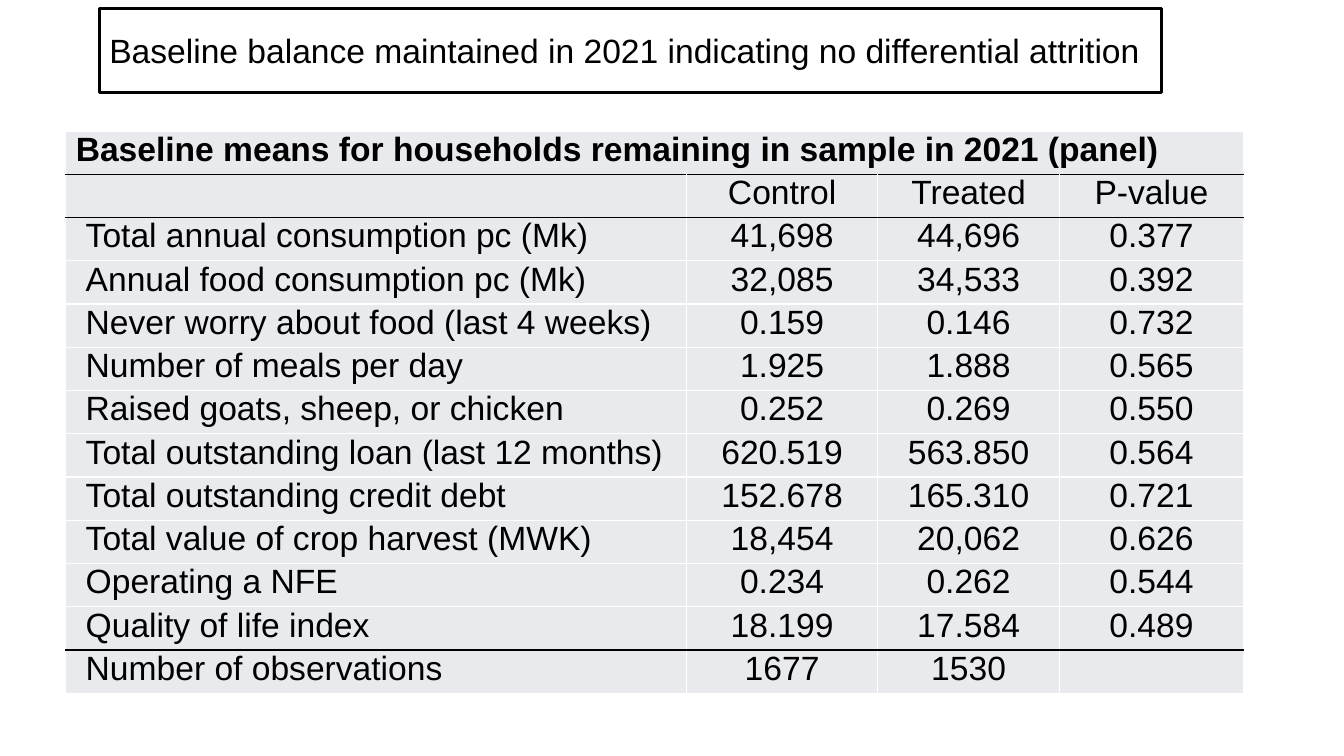
"""Build a slide with a boxed heading and a table of baseline means."""
from dataclasses import dataclass

from lxml import etree
from pptx import Presentation
from pptx.dml.color import RGBColor
from pptx.enum.text import MSO_ANCHOR, MSO_AUTO_SIZE, PP_ALIGN
from pptx.oxml.ns import qn
from pptx.util import Cm, Pt

LEFT, CENTER = PP_ALIGN.LEFT, PP_ALIGN.CENTER
MIDDLE = MSO_ANCHOR.MIDDLE
GROW = MSO_AUTO_SIZE.SHAPE_TO_FIT_TEXT

HEADING = "Baseline balance maintained in 2021 indicating no differential attrition"
ROWS = [
    ("Baseline means for households remaining in sample in 2021 (panel)", "", "", ""),
    ("", "Control", "Treated", "P-value"),
    ("Total annual consumption pc (Mk)", "41,698", "44,696", "0.377"),
    ("Annual food consumption pc (Mk)", "32,085", "34,533", "0.392"),
    ("Never worry about food (last 4 weeks)", "0.159", "0.146", "0.732"),
    ("Number of meals per day", "1.925", "1.888", "0.565"),
    ("Raised goats, sheep, or chicken", "0.252", "0.269", "0.550"),
    ("Total outstanding loan (last 12 months)", "620.519", "563.850", "0.564"),
    ("Total outstanding credit debt", "152.678", "165.310", "0.721"),
    ("Total value of crop harvest (MWK)", "18,454", "20,062", "0.626"),
    ("Operating a NFE", "0.234", "0.262", "0.544"),
    ("Quality of life index", "18.199", "17.584", "0.489"),
    ("Number of observations", "1677", "1530", ""),
]
HEADER_ROWS = 2
RULED_BELOW = {0, 1, len(ROWS) - 2}


@dataclass(frozen=True)
class Theme:
    """Colours and type sizes of the slide."""
    font: str = "Arial"
    size: int = 24
    ink: str = "000000"
    grid: str = "FFFFFF"
    cell: str = "E8EAED"


def write(tf, text, theme, bold=False, align=LEFT, after=0, indent=0):
    """Put one formatted paragraph into a text frame."""
    p = tf.paragraphs[0]
    p.alignment = align
    p.space_after = Pt(after)
    if indent:
        p._p.get_or_add_pPr().set("marL", str(Cm(indent)))
    r = p.add_run()
    r.text = text
    r.font.name = theme.font
    r.font.size = Pt(theme.size)
    r.font.bold = bold
    r.font.color.rgb = RGBColor.from_string(theme.ink)


def border(cell, side, color):
    """Draw one side of a table cell."""
    ln = etree.SubElement(cell._tc.get_or_add_tcPr(), qn(f"a:ln{side}"), w=str(Pt(1)))
    fill = etree.SubElement(ln, qn("a:solidFill"))
    etree.SubElement(fill, qn("a:srgbClr"), val=color)


class Builder:
    """Hold the theme and the current slide."""

    def __init__(self, prs, theme):
        """Add a title-only slide."""
        self.theme = theme
        self.s = prs.slides.add_slide(prs.slide_layouts[5])

    def heading(self, text, left, top, width, height):
        """Place the title in an outlined box."""
        sp = self.s.shapes.title
        sp.left, sp.top, sp.width, sp.height = map(Cm, (left, top, width, height))
        sp.line.color.rgb = RGBColor.from_string(self.theme.ink)
        sp.line.width = Pt(2)
        tf = sp.text_frame
        tf.word_wrap = False
        tf.auto_size = GROW
        tf.vertical_anchor = MIDDLE
        write(tf, text, self.theme)

    def style_cell(self, cell, row):
        """Set the margins, borders and fill of a cell."""
        cell.margin_left = cell.margin_right = Cm(0.25)
        cell.margin_top = cell.margin_bottom = 0
        above, below = (
            self.theme.ink if i in RULED_BELOW else self.theme.grid
            for i in (row - 1, row)
        )
        for side, color in zip("LRTB", (self.theme.grid, self.theme.grid, above, below)):
            border(cell, side, color)
        cell.fill.solid()
        cell.fill.fore_color.rgb = RGBColor.from_string(self.theme.cell)

    def table(self, rows, left, top, widths, row_height):
        """Add the table, its first row merged into a caption."""
        frame = self.s.shapes.add_table(
            len(rows), len(widths), Cm(left), Cm(top),
            Cm(sum(widths)), Cm(row_height * len(rows)))
        tbl = frame.table
        tbl.first_row = tbl.horz_banding = False
        for col, width in zip(tbl.columns, widths):
            col.width = Cm(width)
        for i, row in enumerate(rows):
            tbl.rows[i].height = Cm(row_height)
            header = i < HEADER_ROWS
            for j, text in enumerate(row):
                cell = tbl.cell(i, j)
                self.style_cell(cell, i)
                if text:
                    write(cell.text_frame, text, self.theme, bold=i == 0,
                          align=CENTER if j else LEFT, after=4 if header else 0,
                          indent=0 if header or j else 0.25)
        tbl.cell(0, 0).merge(tbl.cell(0, len(widths) - 1))


def main():
    """Build and save the presentation."""
    prs = Presentation()
    prs.slide_width, prs.slide_height = Cm(33.87), Cm(19.05)
    b = Builder(prs, Theme())
    b.table(ROWS, 1.66, 3.3, (15.65, 4.8, 4.6, 4.62), 1.09)
    b.heading(HEADING, 2.5, 0.63, 26.77, 1.28)
    prs.save("out.pptx")


if __name__ == "__main__":
    main()
